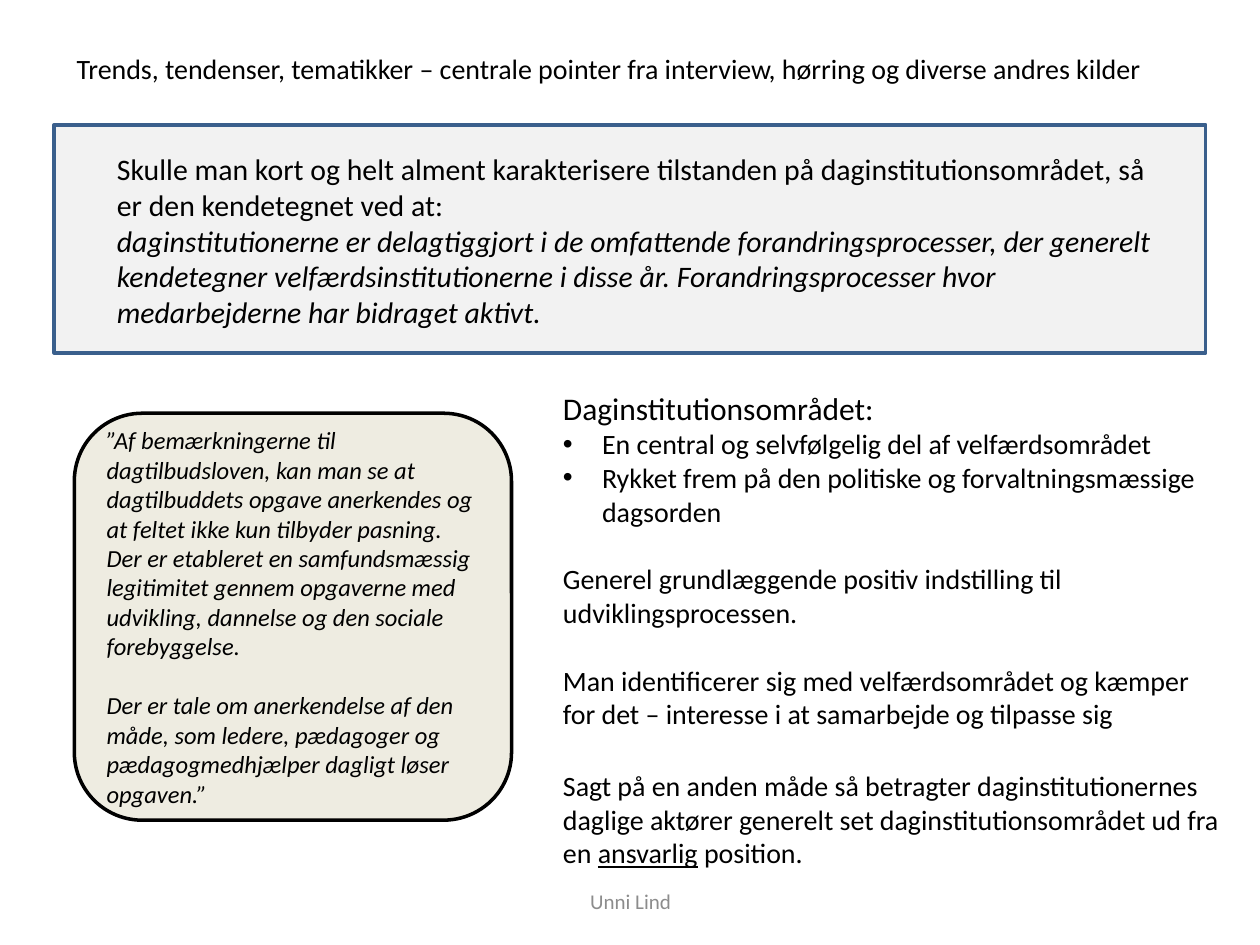
import pptx
import pptx.util
import pptx.dml.color
import pptx.enum.shapes
import pptx.enum.text
import lxml.etree

Inches, Pt = pptx.util.Inches, pptx.util.Pt
SHAPE = pptx.enum.shapes.MSO_SHAPE
ALIGN = pptx.enum.text.PP_ALIGN
ANCHOR = pptx.enum.text.MSO_ANCHOR
HUES = {"ink": "000000", "grey": "8C8C8C", "panel": "F2F2F2",
        "edge": "3A5F8C", "sand": "EEECE1"}


def hue(name):
    return pptx.dml.color.RGBColor.from_string(HUES[name])


def add_run(para, text, size, color="ink", italic=False, under=False):
    run = para.add_run()
    run.text = text
    font = run.font
    font.name, font.size = "Calibri", Pt(size)
    font.italic, font.underline = italic, under
    font.color.rgb = hue(color)


def add_para(frame, first=False, gap=0, align=ALIGN.LEFT):
    para = frame.paragraphs[0] if first else frame.add_paragraph()
    para.alignment = align
    para.space_before = Pt(gap)
    return para


def add_bullet(para):
    props = para._p.get_or_add_pPr()
    props.set("marL", str(Inches(0.31)))
    props.set("indent", str(-Inches(0.31)))
    for tag, key, value in (("buFont", "typeface", "Arial"), ("buChar", "char", "•")):
        mark = lxml.etree.SubElement(props, pptx.oxml.ns.qn("a:" + tag))
        mark.set(key, value)


def add_text(slide, x, y, w, h):
    frame = slide.shapes.add_textbox(Inches(x), Inches(y), Inches(w), Inches(h)).text_frame
    frame.word_wrap = True
    return frame


def add_box(slide, kind, x, y, w, h, fill, line):
    box = slide.shapes.add_shape(kind, Inches(x), Inches(y), Inches(w), Inches(h))
    box.shadow.inherit = False
    box.fill.solid()
    box.fill.fore_color.rgb = hue(fill)
    box.line.color.rgb = hue(line)
    box.line.width = Pt(2)
    return box


def add_title(slide, x, y, w, h):
    frame = add_text(slide, x, y, w, h)
    add_run(add_para(frame, True), "Trends, tendenser, tematikker – centrale pointer fra "
            "interview, hørring og diverse andres kilder", 16)


def add_claim(slide, x, y, w, h):
    add_box(slide, SHAPE.RECTANGLE, x, y, w, h, "panel", "edge")
    frame = add_text(slide, x + 0.4, y + 0.16, w - 0.71, h - 0.28)
    add_run(add_para(frame, True), "Skulle man kort og helt alment karakterisere tilstanden "
            "på daginstitutionsområdet, så er den kendetegnet ved at:", 17)
    add_run(add_para(frame), "daginstitutionerne er delagtiggjort i de omfattende "
            "forandringsprocesser, der generelt kendetegner velfærdsinstitutionerne i disse "
            "år. Forandringsprocesser hvor medarbejderne har bidraget aktivt.", 17, italic=True)


def add_quote(slide, x, y, w, h):
    frame = add_box(slide, SHAPE.ROUNDED_RECTANGLE, x, y, w, h, "sand", "ink").text_frame
    frame.word_wrap = True
    frame.vertical_anchor = ANCHOR.MIDDLE
    add_run(add_para(frame, True), "”Af bemærkningerne til dagtilbudsloven, kan man se at "
            "dagtilbuddets opgave anerkendes og at feltet ikke kun tilbyder pasning. Der er "
            "etableret en samfundsmæssig legitimitet gennem opgaverne med udvikling, dannelse "
            "og den sociale forebyggelse.", 14, italic=True)
    add_run(add_para(frame, gap=17), "Der er tale om anerkendelse af den måde, som ledere, "
            "pædagoger og pædagogmedhjælper dagligt løser opgaven.”", 14, italic=True)


def add_points(slide, x, y, w, h):
    frame = add_text(slide, x, y, w, h)
    add_run(add_para(frame, True), "Daginstitutionsområdet:", 18)
    for text in ("En central og selvfølgelig del af velfærdsområdet",
                 "Rykket frem på den politiske og forvaltningsmæssige dagsorden"):
        para = add_para(frame)
        add_bullet(para)
        add_run(para, text, 16)
    for text in ("Generel grundlæggende positiv indstilling til udviklingsprocessen.",
                 "Man identificerer sig med velfærdsområdet og kæmper for det – interesse i at "
                 "samarbejde og tilpasse sig"):
        add_run(add_para(frame, gap=19.5), text, 16)
    # Closing remark with one underlined word
    para = add_para(frame, gap=22)
    add_run(para, "Sagt på en anden måde så betragter daginstitutionernes daglige aktører "
            "generelt set daginstitutionsområdet ud fra en ", 16)
    add_run(para, "ansvarlig", 16, under=True)
    add_run(para, " position.", 16)


def add_footer(slide, x, y, w, h):
    frame = add_text(slide, x, y, w, h)
    frame.vertical_anchor = ANCHOR.MIDDLE
    add_run(add_para(frame, True, align=ALIGN.CENTER), "Unni Lind", 12, "grey")


def main():
    deck = pptx.Presentation()
    deck.slide_width, deck.slide_height = Inches(10), Inches(7.5)
    slide = deck.slides.add_slide(deck.slide_layouts[6])
    add_claim(slide, 0.43, 0.99, 9.14, 1.81)
    add_footer(slide, 3.42, 6.95, 3.17, 0.4)
    add_title(slide, 0.51, 0.36, 9.13, 0.37)
    add_quote(slide, 0.59, 3.28, 3.47, 3.23)
    add_points(slide, 4.37, 3.04, 5.43, 3.94)
    deck.save("out.pptx")


if __name__ == "__main__":
    main()
